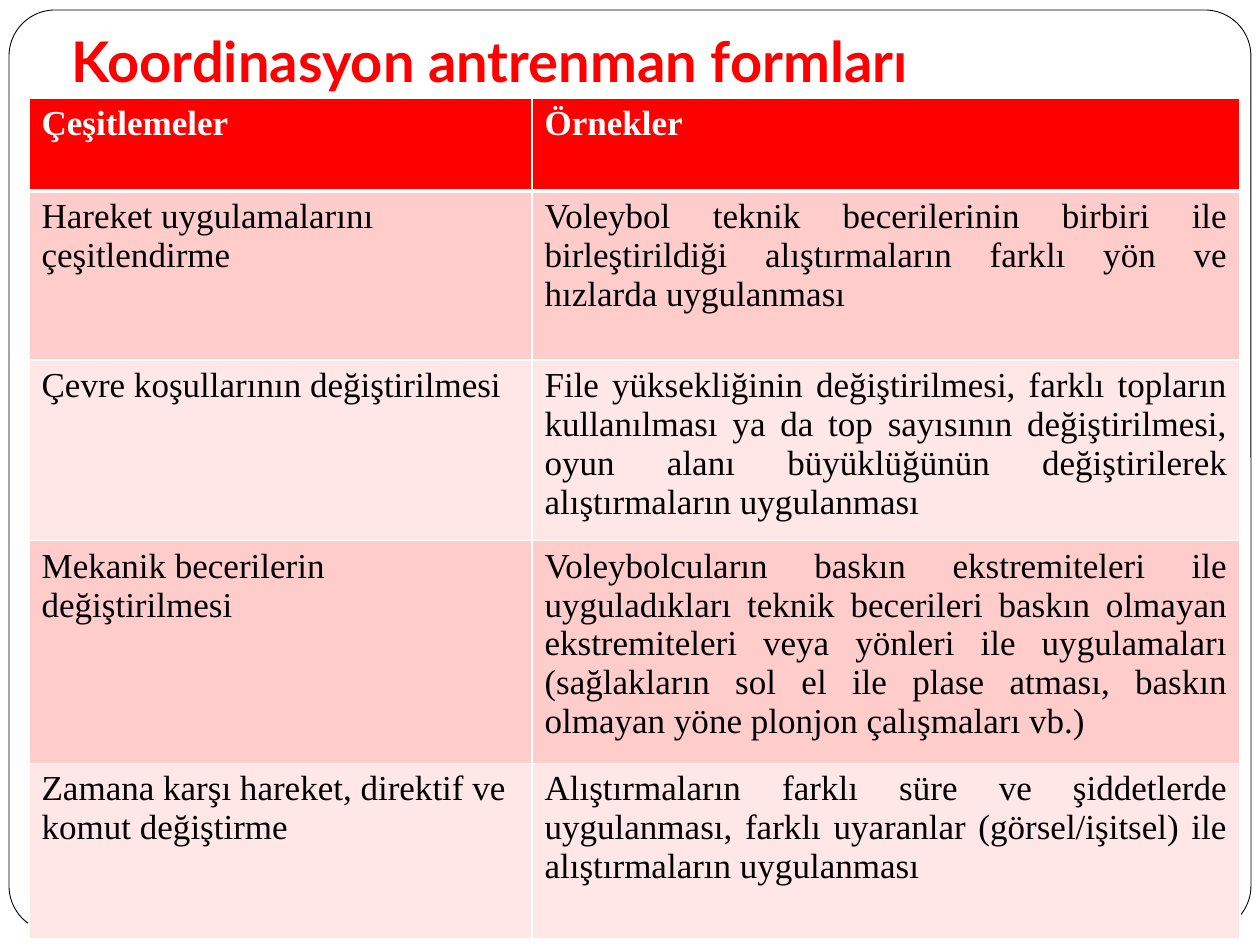
"""Builds a slide with a table of coordination training forms."""
from pptx import Presentation
from pptx.util import Emu, Pt
from pptx.dml.color import RGBColor
from pptx.enum.shapes import MSO_SHAPE
from pptx.enum.text import MSO_ANCHOR, PP_ALIGN
from pptx.oxml import parse_xml
from pptx.oxml.ns import nsdecls

PX = 914400 // 126
RED, WHITE, BLACK = "FF0000", "FFFFFF", "000000"
ROSE, PALE = "FFCCCC", "FFE7E7"


def paint(color, tint):
    color.rgb = RGBColor.from_string(tint)


def write(para, text, face, size, tint, bold):
    run = para.add_run()
    run.text = text
    run.font.name = face
    run.font.size = Pt(size)
    run.font.bold = bold
    paint(run.font.color, tint)


deck = Presentation()
deck.slide_width = Emu(1260 * PX)
deck.slide_height = Emu(945 * PX)
slide = deck.slides.add_slide(deck.slide_layouts[6])

frame = slide.shapes.add_shape(
    MSO_SHAPE.ROUNDED_RECTANGLE, 9 * PX, 10 * PX, 1242 * PX, 922 * PX)
frame.adjustments[0] = 0.05
frame.shadow.inherit = False
frame.fill.solid()
paint(frame.fill.fore_color, WHITE)
paint(frame.line.color, BLACK)
frame.line.width = Pt(0.5)

title = slide.shapes.add_textbox(59 * PX, 29 * PX, 1138 * PX, 78 * PX).text_frame
title.word_wrap = True
title.vertical_anchor = MSO_ANCHOR.BOTTOM
title.margin_bottom = Emu(13 * PX)
write(title.paragraphs[0], "Koordinasyon antrenman formları", "Lato", 32, RED, True)

rows = [
    ("Çeşitlemeler", "Örnekler"),
    ("Hareket uygulamalarını çeşitlendirme",
     "Voleybol teknik becerilerinin birbiri ile birleştirildiği "
     "alıştırmaların farklı yön ve hızlarda uygulanması"),
    ("Çevre koşullarının değiştirilmesi",
     "File yüksekliğinin değiştirilmesi, farklı topların kullanılması ya da "
     "top sayısının değiştirilmesi, oyun alanı büyüklüğünün değiştirilerek "
     "alıştırmaların uygulanması"),
    ("Mekanik becerilerin değiştirilmesi",
     "Voleybolcuların baskın ekstremiteleri ile uyguladıkları teknik becerileri "
     "baskın olmayan ekstremiteleri veya yönleri ile uygulamaları (sağlakların "
     "sol el ile plase atması, baskın olmayan yöne plonjon çalışmaları vb.)"),
    ("Zamana karşı hareket, direktif ve komut değiştirme",
     "Alıştırmaların farklı süre ve şiddetlerde uygulanması, farklı uyaranlar "
     "(görsel/işitsel) ile alıştırmaların uygulanması"),
]
widths = [503, 708]
heights = [93, 169, 175, 208, 175]
table = slide.shapes.add_table(
    len(rows), len(widths), 29 * PX, 98 * PX,
    sum(widths) * PX, sum(heights) * PX).table
for col, width in zip(table.columns, widths):
    col.width = Emu(width * PX)

for i, (texts, height) in enumerate(zip(rows, heights)):
    table.rows[i].height = Emu(height * PX)
    head = i == 0
    fill = RED if head else ROSE if i % 2 else PALE
    for j, text in enumerate(texts):
        cell = table.cell(i, j)
        para = cell.text_frame.paragraphs[0]
        if j and not head:
            para.alignment = PP_ALIGN.JUSTIFY
        write(para, text, "Times New Roman", 20, WHITE if head else BLACK, head)
        props = cell._tc.get_or_add_tcPr()
        for side in "LRTB":
            thick = (i, side) in [(0, "B"), (1, "T")]
            props.append(parse_xml(
                f'<a:ln{side} {nsdecls("a")} w="{Pt(3 if thick else 1)}">'
                f'<a:solidFill><a:srgbClr val="{WHITE}"/></a:solidFill>'
                f'</a:ln{side}>'))
        cell.fill.solid()
        paint(cell.fill.fore_color, fill)

deck.save("out.pptx")
